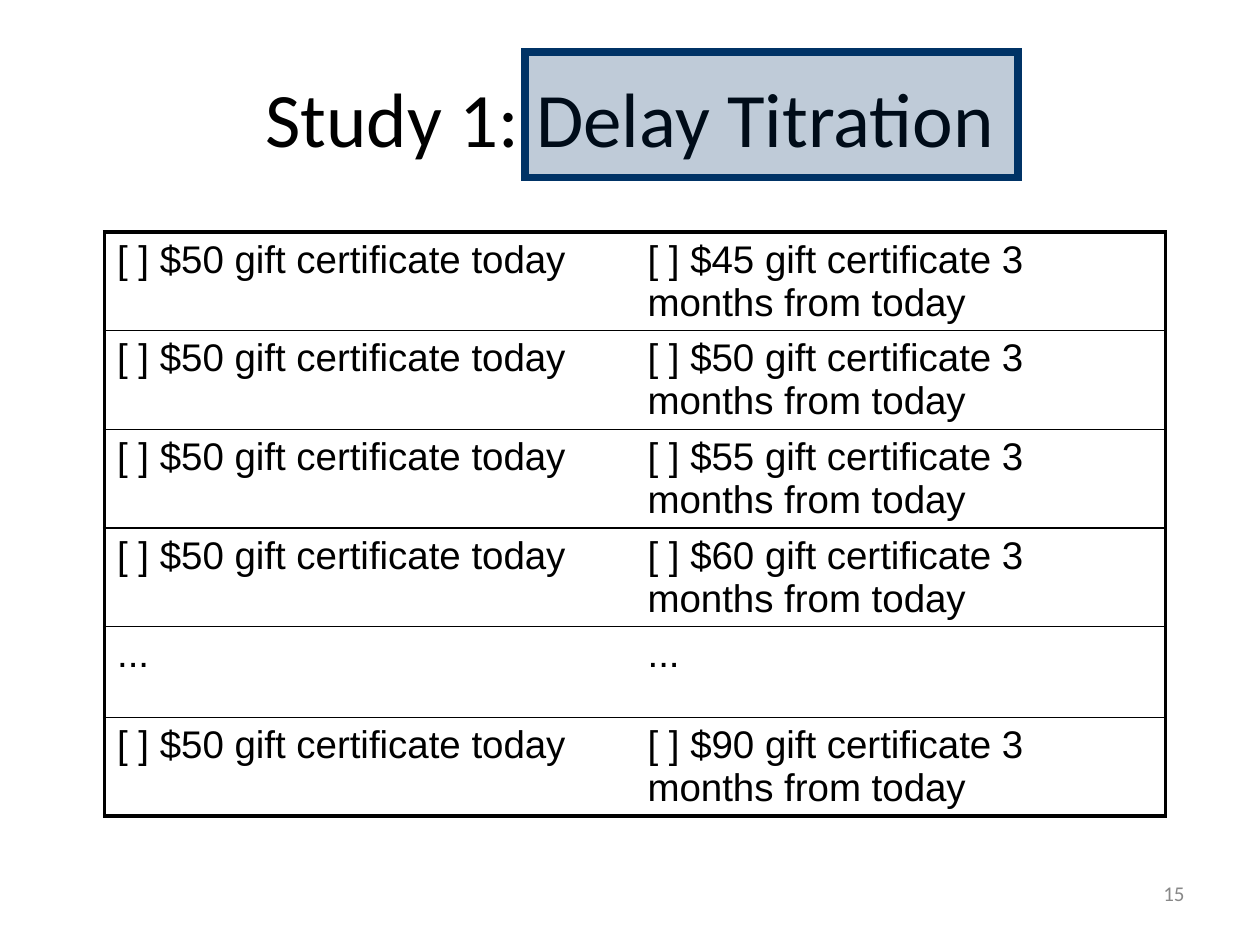
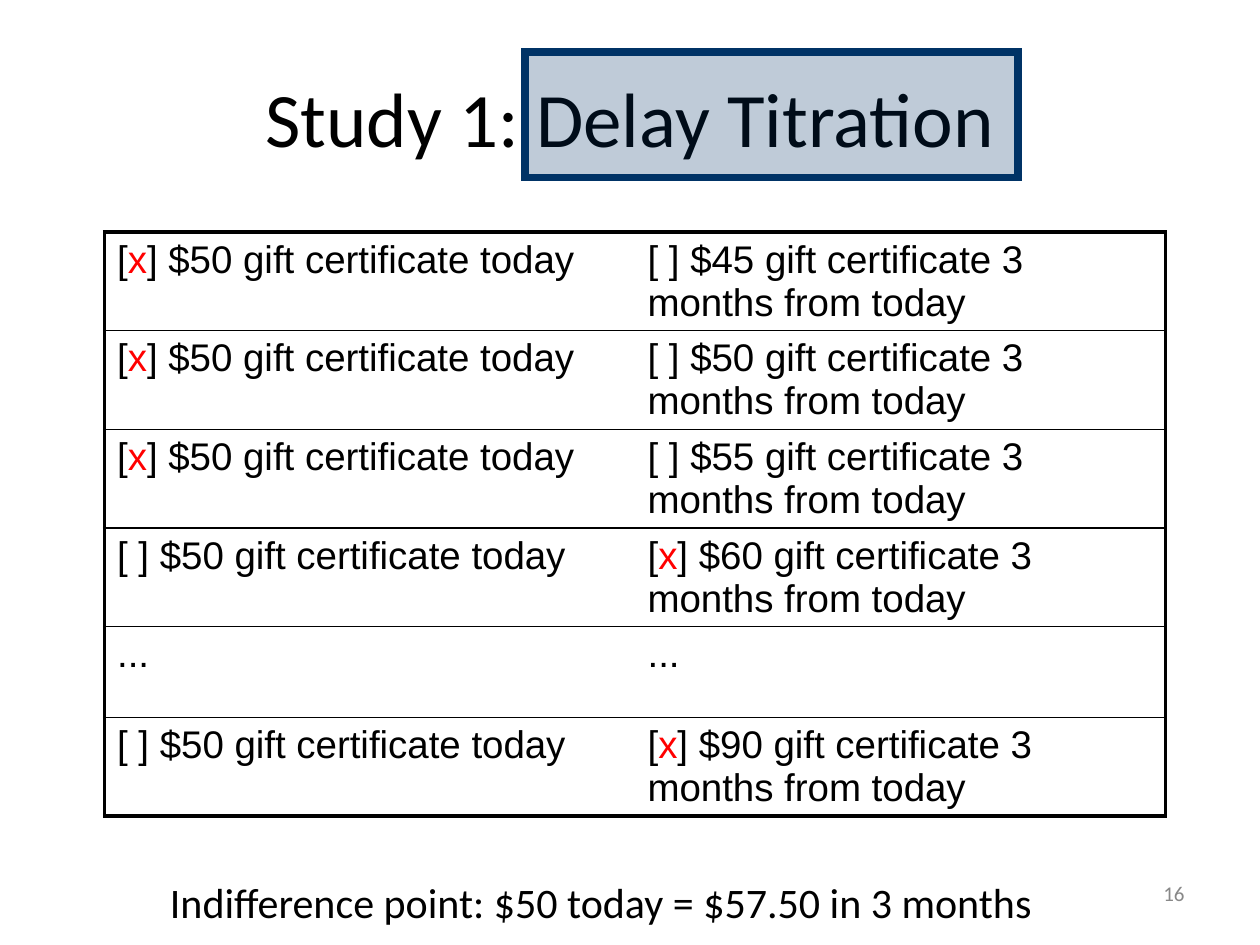
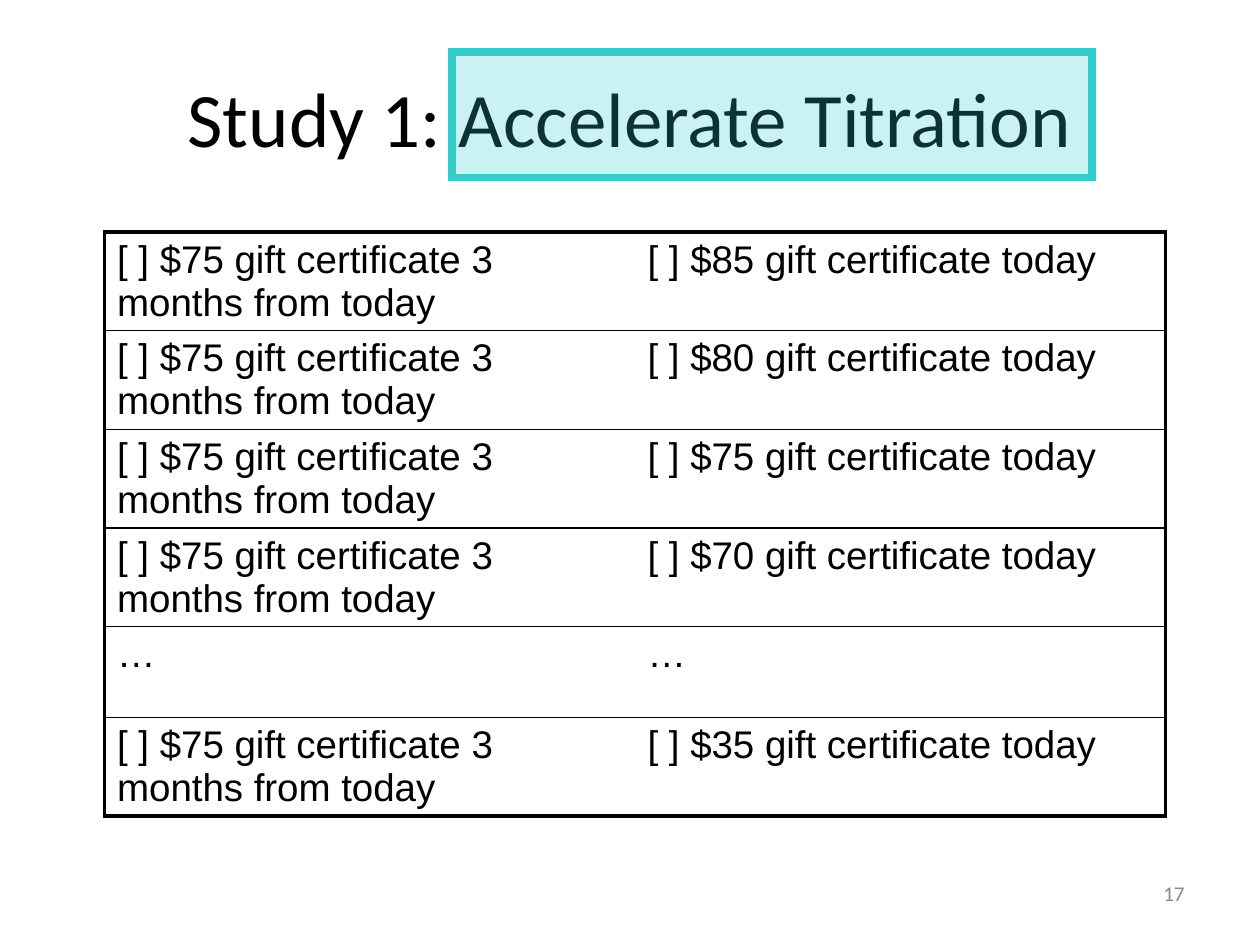
"""Build three slides that show the titration choice lists of Study 1."""
from dataclasses import dataclass

from lxml.etree import SubElement
from pptx import Presentation
from pptx.dml.color import RGBColor as Rgb
from pptx.enum.shapes import MSO_SHAPE as Shape
from pptx.enum.text import MSO_ANCHOR as Anchor, PP_ALIGN as Align
from pptx.oxml.ns import qn
from pptx.util import Inches, Pt

NOW = "${} gift certificate today"
LATER = "${} gift certificate 3 months from today"
DELAY = dict(title="Study 1: Delay Titration", fixed=NOW.format(50), varied=LATER,
             amounts=[45, 50, 55, 60, None, 90], gap="...", accent="003366", box=(4.17, 3.91))
ACCELERATE = dict(title="Study 1: Accelerate Titration", fixed=LATER.format(75), varied=NOW,
                  amounts=[85, 80, 75, 70, None, 35], gap="…", accent="33CCCC", box=(3.59, 5.08))
FIXED, VARIED = 0, 1
UNANSWERED = [None] * 6
ANSWERED = [FIXED, FIXED, FIXED, VARIED, None, VARIED]
SLIDES = [
    (15, DELAY, UNANSWERED, None),
    (16, DELAY, ANSWERED, "Indifference point: $50 today = $57.50 in 3 months"),
    (17, ACCELERATE, UNANSWERED, None),
]


@dataclass(frozen=True)
class Theme:
    """Colours, fonts, type sizes and line widths."""
    ink: str = "000000"
    mark: str = "FF0000"
    muted: str = "888888"
    heading_font: str = "Calibri"
    table_font: str = "Arial"
    title_size: int = 44
    note_size: int = 24
    choice_size: int = 22
    number_size: int = 12
    outer_line: float = 2.25
    inner_line: float = 1
    box_line: float = 4.5
    box_opacity: int = 25


THEME = Theme()
WIDTH, HEIGHT = 10, 7.5
TABLE_LEFT, TABLE_TOP, COLUMN = 0.83, 1.84, 4.21
OFFER_ROW, GAP_ROW = 0.78, 0.72
NO_GRID_STYLE = "{2D5ABB26-0587-4C30-8999-92F81FD0307C}"


def inches(*lengths):
    """Convert lengths to slide units."""
    return [Inches(length) for length in lengths]


def write(frame, *runs, size, font=THEME.heading_font, color=THEME.ink, align=Align.LEFT):
    """Write runs, each a text or a (text, colour) pair, into one paragraph."""
    paragraph = frame.paragraphs[0]
    paragraph.alignment = align
    for part in runs:
        words, shade = part if isinstance(part, tuple) else (part, color)
        run = paragraph.add_run()
        run.text = words
        run.font.size, run.font.name = Pt(size), font
        run.font.color.rgb = Rgb.from_string(shade)


def add_text(slide, place, words, anchor=Anchor.TOP, **style):
    """Add a wrapping text box at the given place."""
    frame = slide.shapes.add_textbox(*inches(*place)).text_frame
    frame.word_wrap = True
    frame.vertical_anchor = anchor
    write(frame, words, **style)


def draw_border(cell, side, width):
    """Draw one cell edge, or clear it when the width is zero."""
    edge = SubElement(cell._tc.get_or_add_tcPr(), qn(f"a:ln{side}"), w=str(Pt(width)))
    if not width:
        SubElement(edge, qn("a:noFill"))
        return
    SubElement(SubElement(edge, qn("a:solidFill")), qn("a:srgbClr"), val=THEME.ink)


def choice_runs(offer, picked):
    """Return the runs of one tick box and its offer."""
    return ["[", ("x", THEME.mark), f"] {offer}"] if picked else [f"[ ] {offer}"]


def add_choices(slide, study, picks):
    """Add the table of paired offers."""
    amounts = study["amounts"]
    last = len(amounts) - 1
    heights = [OFFER_ROW if amount else GAP_ROW for amount in amounts]
    place = inches(TABLE_LEFT, TABLE_TOP, 2 * COLUMN, sum(heights))
    table = slide.shapes.add_table(len(amounts), 2, *place).table
    table.first_row = table.horz_banding = False
    table._tbl.tblPr.find(qn("a:tableStyleId")).text = NO_GRID_STYLE
    for column in table.columns:
        column.width = Inches(COLUMN)
    for index, (amount, picked) in enumerate(zip(amounts, picks)):
        table.rows[index].height = Inches(heights[index])
        for side, offer in enumerate([study["fixed"], study["varied"].format(amount)]):
            cell = table.cell(index, side)
            cell.margin_bottom = 0
            runs = choice_runs(offer, picked == side) if amount else [study["gap"]]
            write(cell.text_frame, *runs, size=THEME.choice_size, font=THEME.table_font)
            draw_border(cell, "L", THEME.outer_line if side == FIXED else 0)
            draw_border(cell, "R", THEME.outer_line if side == VARIED else 0)
            draw_border(cell, "T", THEME.outer_line if index == 0 else THEME.inner_line)
            draw_border(cell, "B", THEME.outer_line if index == last else THEME.inner_line)
            cell.fill.background()


def add_highlight(slide, study):
    """Frame the name of the titration with a translucent, sharp-cornered box."""
    left, width = study["box"]
    accent = Rgb.from_string(study["accent"])
    box = slide.shapes.add_shape(Shape.RECTANGLE, *inches(left, 0.41, width, 1))
    box.shadow.inherit = False
    box.fill.solid()
    box.fill.fore_color.rgb = box.line.color.rgb = accent
    box.line.width = Pt(THEME.box_line)
    properties = box._element.spPr
    SubElement(properties.find(qn("a:ln")), qn("a:miter"), lim="800000")
    tint = properties.find(qn("a:solidFill")).find(qn("a:srgbClr"))
    SubElement(tint, qn("a:alpha"), val=str(THEME.box_opacity * 1000))


def main():
    """Build and save the deck."""
    deck = Presentation()
    deck.slide_width, deck.slide_height = inches(WIDTH, HEIGHT)
    for number, study, picks, note in SLIDES:
        slide = deck.slides.add_slide(deck.slide_layouts[6])
        add_text(slide, (7.17, 6.83, 2.33, 0.52), str(number), size=THEME.number_size,
                 color=THEME.muted, align=Align.RIGHT, anchor=Anchor.MIDDLE)
        add_text(slide, (0.5, 0.3, 9, 1.25), study["title"], size=THEME.title_size,
                 align=Align.CENTER, anchor=Anchor.MIDDLE)
        add_choices(slide, study, picks)
        add_highlight(slide, study)
        if note:
            add_text(slide, (1.25, 6.91, 7.11, 0.5), note, size=THEME.note_size)
    deck.save("out.pptx")


if __name__ == "__main__":
    main()
